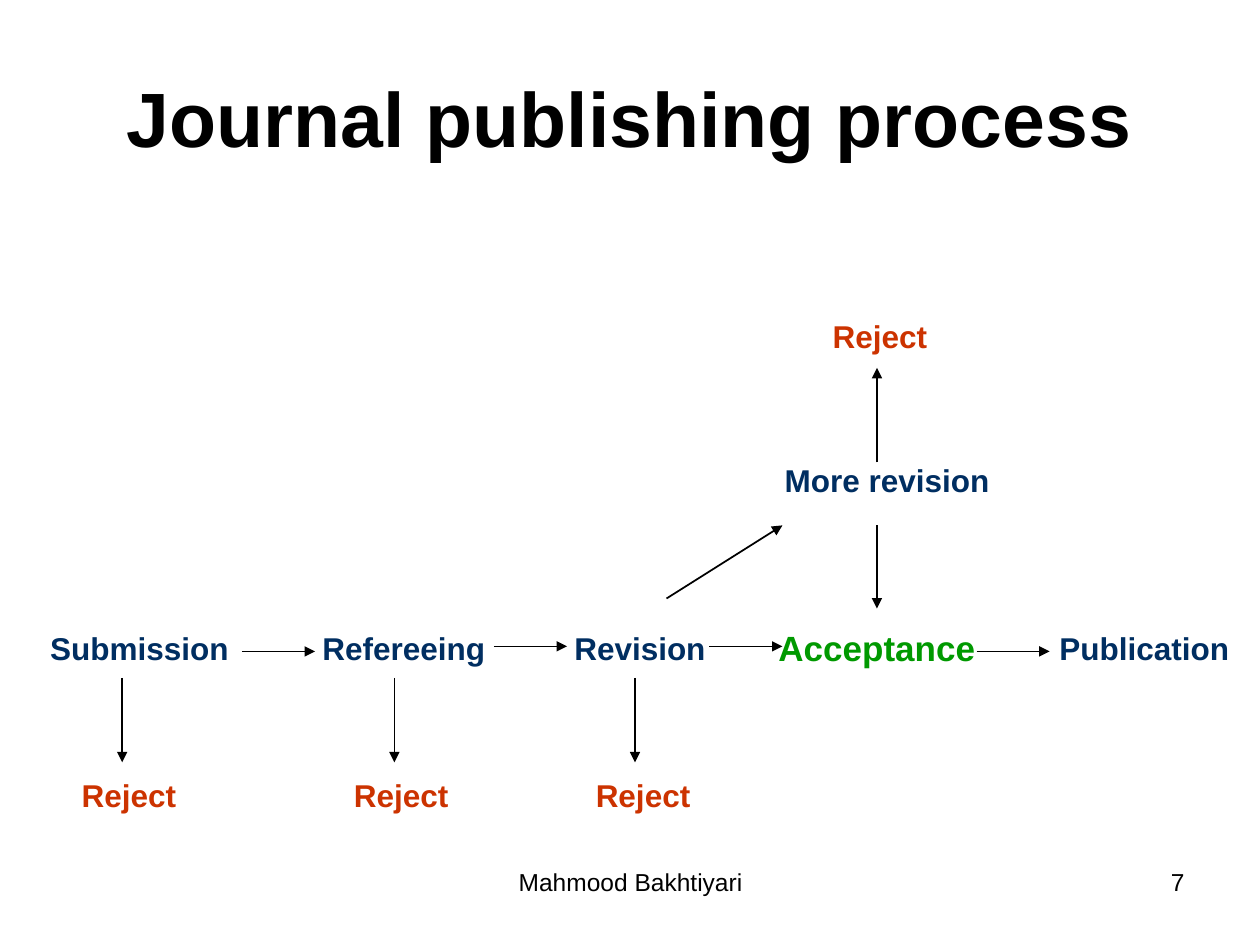
from lxml import etree
from pptx import Presentation
from pptx.dml.color import RGBColor
from pptx.enum.shapes import MSO_CONNECTOR
from pptx.enum.text import MSO_ANCHOR, PP_ALIGN
from pptx.oxml.ns import qn
from pptx.util import Inches, Pt

BLACK = RGBColor(0x00, 0x00, 0x00)
NAVY = RGBColor(0x00, 0x2E, 0x61)
RED = RGBColor(0xCC, 0x33, 0x00)
GREEN = RGBColor(0x00, 0x99, 0x00)

prs = Presentation()
prs.slide_width, prs.slide_height = Inches(10), Inches(7.5)
s = prs.slides.add_slide(prs.slide_layouts[6])


def add_text(text, x, y, w, h, size, color, bold=True, align=PP_ALIGN.LEFT, wrap=False):
    sp = s.shapes.add_textbox(Inches(x), Inches(y), Inches(w), Inches(h))
    tf = sp.text_frame
    tf.word_wrap = wrap
    p = tf.paragraphs[0]
    p.alignment = align
    r = p.add_run()
    r.text = text
    r.font.name = "Arial"
    r.font.size = Pt(size)
    r.font.bold = bold
    r.font.color.rgb = color
    return tf


def add_arrow(x1, y1, x2, y2):
    cn = s.shapes.add_connector(
        MSO_CONNECTOR.STRAIGHT, Inches(x1), Inches(y1), Inches(x2), Inches(y2))
    cn.line.color.rgb = BLACK
    cn.line.width = Pt(1)
    etree.SubElement(cn.line._get_or_add_ln(), qn("a:tailEnd"), type="triangle")
    etree.SubElement(cn._element.spPr, qn("a:effectLst"))


title = add_text("Journal publishing process", 0.5, 0.3, 9, 1.25, 44, BLACK,
                 align=PP_ALIGN.CENTER, wrap=True)
title.vertical_anchor = MSO_ANCHOR.MIDDLE

# Main row of stages
for stage, x, w in [("Submission", 0.3, 1.62), ("Refereeing", 2.46, 1.49),
                    ("Revision", 4.46, 1.24), ("Publication", 8.31, 1.55)]:
    add_text(stage, x, 4.94, w, 0.4, 18, NAVY)
add_text("Acceptance", 6.08, 4.92, 1.76, 0.43, 20, GREEN)
for x, y in [(1.92, 5.17), (3.92, 5.13), (5.63, 5.13), (7.75, 5.17)]:
    add_arrow(x, y, x + 0.58, y)

# Rejections below the first three stages
for text_x, arrow_x in [(0.55, 0.97), (2.71, 3.13), (4.63, 5.04)]:
    add_arrow(arrow_x, 5.38, arrow_x, 6.05)
    add_text("Reject", text_x, 6.11, 0.95, 0.4, 18, RED)

# Further revision branch
add_text("More revision", 6.13, 3.61, 1.83, 0.4, 18, NAVY)
add_text("Reject", 6.51, 2.47, 0.95, 0.4, 18, RED)
add_arrow(5.29, 4.75, 6.21, 4.17)
add_arrow(6.96, 3.67, 6.96, 2.92)
add_arrow(6.96, 4.17, 6.96, 4.83)

# Footer
add_text("Mahmood Bakhtiyari", 3.42, 6.83, 3.17, 0.52, 14, BLACK,
         bold=False, align=PP_ALIGN.CENTER, wrap=True)
add_text("7", 7.17, 6.83, 2.33, 0.52, 14, BLACK,
         bold=False, align=PP_ALIGN.RIGHT, wrap=True)

prs.save("out.pptx")
